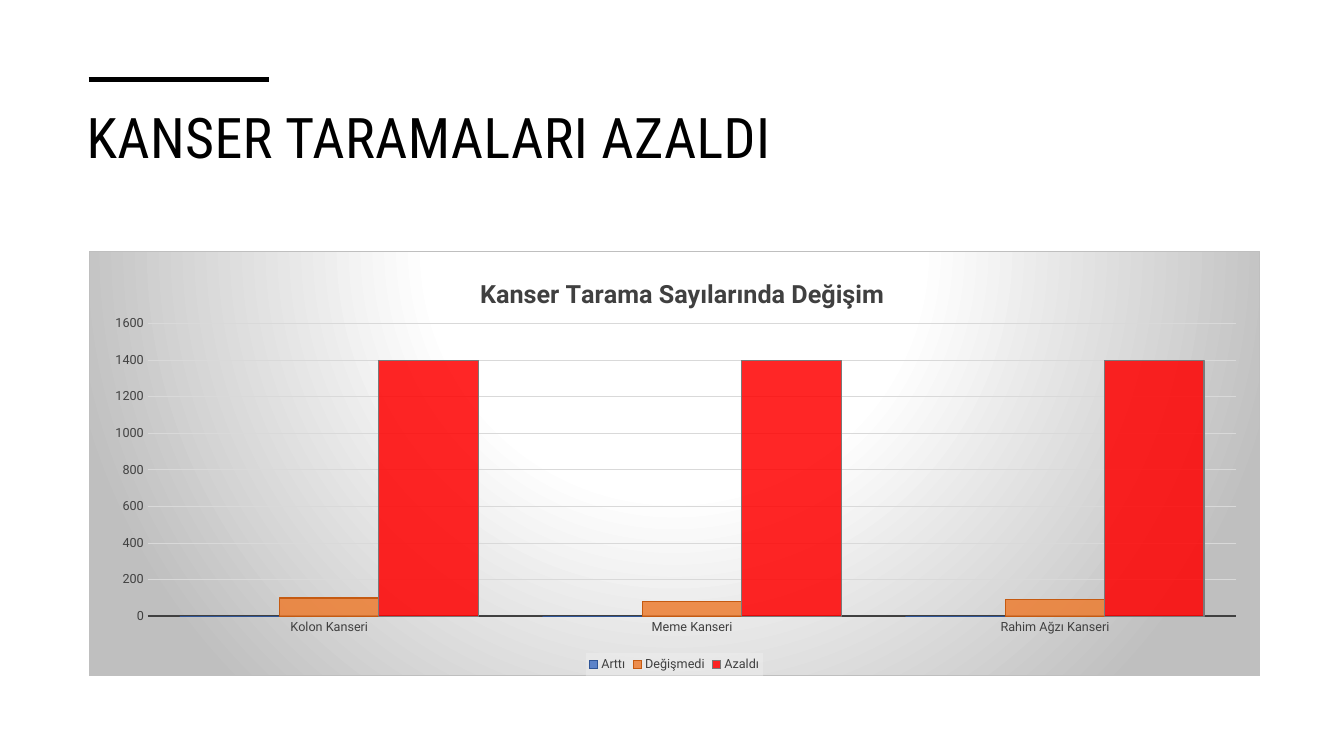
from lxml import etree
from pptx import Presentation
from pptx.chart.data import CategoryChartData
from pptx.dml.color import RGBColor
from pptx.enum.chart import XL_CHART_TYPE, XL_LEGEND_POSITION, XL_TICK_MARK
from pptx.enum.shapes import MSO_CONNECTOR
from pptx.enum.text import MSO_ANCHOR
from pptx.oxml.ns import qn
from pptx.util import Inches, Pt

CLUSTERED = XL_CHART_TYPE.COLUMN_CLUSTERED
LEGEND_BOTTOM = XL_LEGEND_POSITION.BOTTOM
NO_TICK = XL_TICK_MARK.NONE
STRAIGHT = MSO_CONNECTOR.STRAIGHT
TOP = MSO_ANCHOR.TOP

COLORS = {
    "black": "000000", "white": "FFFFFF", "label": "404040", "grid": "D9D9D9",
    "frame": "BFBFBF", "legend": "F2F2F2",
    "blue": "4472C4", "blue_line": "2F5597",
    "orange": "ED7D31", "orange_line": "C55A11",
    "red": "FF0000", "red_line": "7A7A7A",
}
LABEL_FONT = {"name": "Roboto", "size": Pt(9), "bold": False}
CATEGORIES = ["Kolon Kanseri", "Meme Kanseri", "Rahim Ağzı Kanseri"]
SERIES = [
    ("Arttı", [0, 0, 0], "blue", "blue_line"),
    ("Değişmedi", [100, 80, 90], "orange", "orange_line"),
    ("Azaldı", [1400, 1400, 1400], "red", "red_line"),
]


def rgb(color):
    return RGBColor.from_string(COLORS[color])


def format_font(font, color, **values):
    for name, value in values.items():
        setattr(font, name, value)
    font.color.rgb = rgb(color)


def format_line(line, color, width):
    line.color.rgb = rgb(color)
    line.width = Pt(width)


def add_element(parent, tag, **attributes):
    element = etree.SubElement(parent, qn(tag))
    for name, value in attributes.items():
        element.set(name, str(value))
    return element


def add_fill(parent, color, opacity):
    fill = add_element(parent, "a:solidFill")
    add_element(add_element(fill, "a:srgbClr", val=COLORS[color]), "a:alpha", val=opacity * 1000)


def make_layout(**positions):
    layout = etree.Element(qn("c:layout"))
    manual = add_element(layout, "c:manualLayout")
    if "w" in positions:
        add_element(manual, "c:layoutTarget", val="inner")
    for mode in ("c:xMode", "c:yMode"):
        add_element(manual, mode, val="edge")
    for name, value in positions.items():
        add_element(manual, "c:" + name, val=value)
    return layout


def add_heading(slide, left, top, width, height):
    rule_left, rule_top = left + 0.12, top - 0.18
    rule = slide.shapes.add_connector(
        STRAIGHT, Inches(rule_left), Inches(rule_top), Inches(rule_left + 1.79), Inches(rule_top))
    format_line(rule.line, "black", 3.5)
    add_element(rule._element.spPr, "a:effectLst")

    box = slide.shapes.add_textbox(Inches(left), Inches(top), Inches(width), Inches(height))
    frame = box.text_frame
    frame.word_wrap = True
    frame.vertical_anchor = TOP
    run = frame.paragraphs[0].add_run()
    run.text = "KANSER TARAMALARI AZALDI"
    format_font(run.font, "black", name="Roboto Condensed", size=Pt(40))
    run.font._element.set("spc", "30")


def add_chart_background(chart):
    properties = etree.Element(qn("c:spPr"))
    gradient = add_element(properties, "a:gradFill", rotWithShape=1)
    stops = add_element(gradient, "a:gsLst")
    for position, color in ((0, "white"), (39, "white"), (100, "frame")):
        stop = add_element(stops, "a:gs", pos=position * 1000)
        add_element(stop, "a:srgbClr", val=COLORS[color])
    path = add_element(gradient, "a:path", path="circle")
    add_element(path, "a:fillToRect", l=50000, t=-80000, r=50000, b=180000)
    border = add_element(properties, "a:ln", w=Pt(0.75))
    add_element(add_element(border, "a:solidFill"), "a:srgbClr", val=COLORS["frame"])
    chart._chartSpace.find(qn("c:chart")).addnext(properties)


def format_axes(chart):
    category_axis, value_axis = chart.category_axis, chart.value_axis
    for axis in (category_axis, value_axis):
        axis.major_tick_mark = NO_TICK
        axis.minor_tick_mark = NO_TICK
        format_font(axis.tick_labels.font, "label", **LABEL_FONT)
    format_line(category_axis.format.line, "label", 1.5)
    value_axis.format.line.fill.background()
    value_axis.minimum_scale = 0
    value_axis.maximum_scale = 1600
    value_axis.major_unit = 200
    value_axis.has_major_gridlines = True
    format_line(value_axis.major_gridlines.format.line, "grid", 0.75)


def add_chart_title(chart):
    chart.has_title = True
    title = chart.chart_title
    title.include_in_layout = False
    run = title.text_frame.paragraphs[0].add_run()
    run.text = "Kanser Tarama Sayılarında Değişim"
    format_font(run.font, "label", name="Roboto", size=Pt(18), bold=True)
    element = title._element
    for layout in element.findall(qn("c:layout")):
        element.remove(layout)
    element.find(qn("c:tx")).addnext(make_layout(x=0.33, y=0.05))


def add_legend(chart):
    chart.has_legend = True
    legend = chart.legend
    legend.position = LEGEND_BOTTOM
    legend.include_in_layout = False
    format_font(legend.font, "label", **LABEL_FONT)
    properties = etree.Element(qn("c:spPr"))
    add_fill(properties, "legend", 39)
    legend._element.find(qn("c:txPr")).addprevious(properties)


def add_screening_chart(slide, left, top, width, height):
    data = CategoryChartData()
    data.categories = CATEGORIES
    for name, values, _, _ in SERIES:
        data.add_series(name, values)
    chart = slide.shapes.add_chart(
        CLUSTERED, Inches(left), Inches(top), Inches(width), Inches(height), data).chart
    format_font(chart.font, "black", name="Roboto", size=Pt(10))
    add_chart_background(chart)
    add_chart_title(chart)
    add_legend(chart)
    format_axes(chart)

    plot = chart.plots[0]
    plot.gap_width = 65
    plot.overlap = 0
    plot.vary_by_categories = False
    for series, (_, _, fill, line) in zip(plot.series, SERIES):
        series.invert_if_negative = False
        add_fill(series.format._element.get_or_add_spPr(), fill, 85)
        format_line(series.format.line, line, 0.75)

    plot_area = chart._chartSpace.chart.plotArea
    for layout in plot_area.findall(qn("c:layout")):
        plot_area.remove(layout)
    plot_area.insert(0, make_layout(x=0.05, y=0.17, w=0.93, h=0.69))


def main():
    presentation = Presentation()
    presentation.slide_width = Inches(13.33)
    presentation.slide_height = Inches(7.5)
    slide = presentation.slides.add_slide(presentation.slide_layouts[6])
    add_heading(slide, 0.76, 0.97, 11.81, 1.15)
    add_screening_chart(slide, 0.88, 2.49, 11.62, 4.22)
    presentation.save("out.pptx")


if __name__ == "__main__":
    main()
